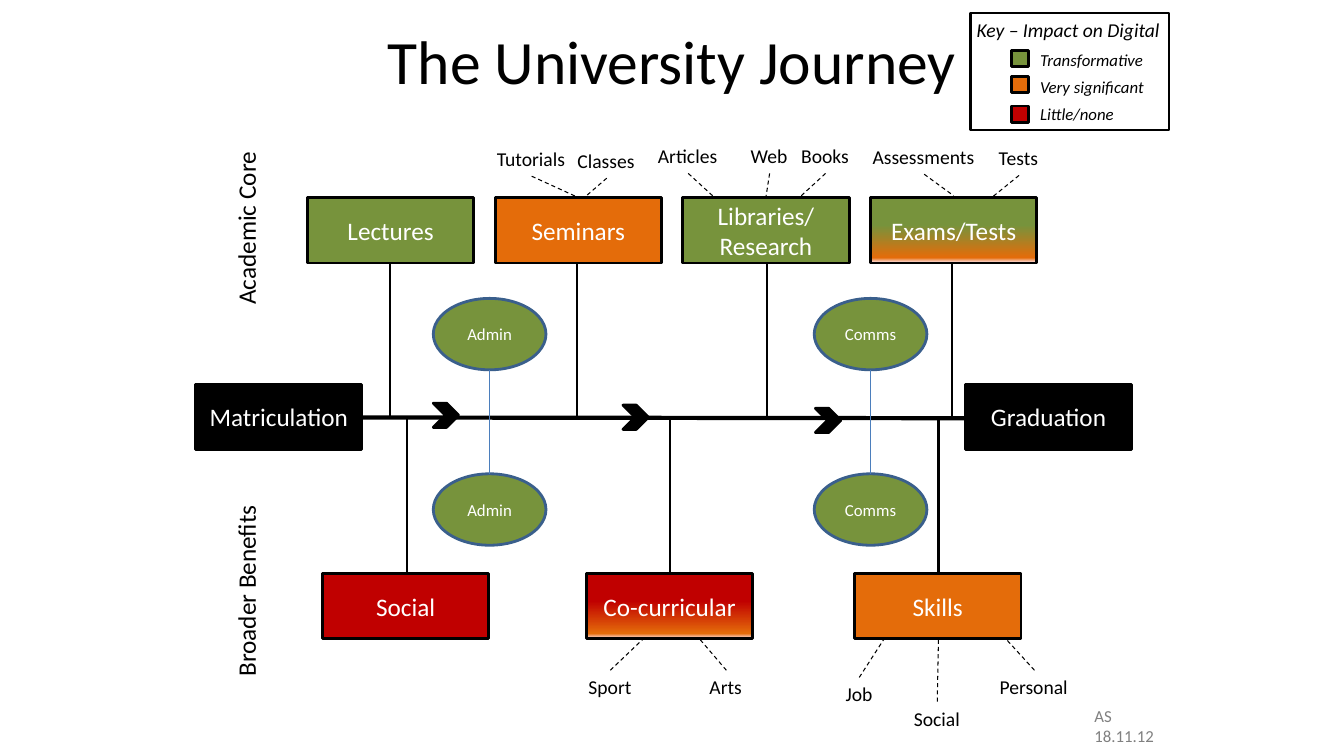
from copy import deepcopy
from typing import NamedTuple, Optional

from lxml.etree import SubElement
from pptx import Presentation
from pptx.dml.color import RGBColor
from pptx.enum.dml import MSO_LINE
from pptx.enum.shapes import MSO_CONNECTOR, MSO_SHAPE
from pptx.enum.text import MSO_ANCHOR, MSO_AUTO_SIZE, PP_ALIGN
from pptx.oxml.ns import qn
from pptx.shapes.autoshape import Shape
from pptx.util import Cm, Pt

BLACK = RGBColor(0x00, 0x00, 0x00)
WHITE = RGBColor(0xFF, 0xFF, 0xFF)
GREY = RGBColor(0x80, 0x80, 0x80)
GREEN = RGBColor(0x77, 0x93, 0x3C)
ORANGE = RGBColor(0xE4, 0x6C, 0x0A)
RED = RGBColor(0xC0, 0x00, 0x00)
PALE = RGBColor(0xFF, 0xEB, 0xFA)
OVAL_LINE = RGBColor(0x3A, 0x5F, 0x8C)
LINK_BLUE = RGBColor(0x4B, 0x7E, 0xBC)

BOX_W, BOX_H = 4.19, 1.65
OVAL_W, OVAL_H = 2.84, 1.8
LABEL_H = 0.86
CORE_Y, AXIS_Y, BENEFIT_Y = 4.98, 10.53, 14.45


class Stage(NamedTuple):
    text: str
    x: float
    y: float
    fill: RGBColor
    fade: Optional[RGBColor] = None


class Label(NamedTuple):
    """An activity name and the point on its stage that it is linked to."""
    text: str
    x: float
    y: float
    w: float
    to_x: float
    to_y: float


class Note(NamedTuple):
    text: str
    x: float
    y: float
    w: float
    h: float
    size: int
    color: RGBColor = BLACK
    italic: bool = False
    rotation: int = 0
    gap: float = 0


CORE = [
    Stage(text, 7.75 + 4.73 * i, CORE_Y, fill, fade)
    for i, (text, fill, fade) in enumerate([
        ("Lectures", GREEN, None),
        ("Seminars", ORANGE, None),
        ("Libraries/\nResearch", GREEN, None),
        ("Exams/Tests", GREEN, ORANGE),
    ])
]
BENEFITS = [
    Stage("Social", 8.13, BENEFIT_Y, RED),
    Stage("Co-curricular", 14.78, BENEFIT_Y, RED, ORANGE),
    Stage("Skills", 21.54, BENEFIT_Y, ORANGE),
]
ENDS = [
    Stage("Matriculation", 4.93, 9.68, BLACK),
    Stage("Graduation", 24.33, 9.68, BLACK),
]
CORE_STEMS = [9.83, 14.53, 19.33, 24.0]
BENEFIT_STEMS = [10.26, 16.89, 23.65]
SERVICES = [("Admin", 10.92), ("Comms", 20.52)]
CHEVRONS = [(10.92, 10.16), (15.7, 10.21), (20.55, 10.29)]
LABELS = [
    Label("Tutorials", 12.27, 3.58, 2.26, 14.58, 4.98),
    Label("Classes", 14.3, 3.63, 1.98, 14.78, 4.93),
    Label("Articles", 16.33, 3.51, 2.03, 18.01, 4.98),
    Label("Web", 18.67, 3.51, 1.45, 19.3, 4.98),
    Label("Books", 19.94, 3.51, 1.73, 20.14, 4.98),
    Label("Assessments", 21.74, 3.53, 3.1, 24.03, 4.93),
    Label("Tests", 24.92, 3.56, 1.52, 24.99, 4.98),
    Label("Sport", 14.58, 16.89, 1.6, 16.21, 16.1),
    Label("Arts", 17.63, 16.89, 1.35, 17.63, 16.1),
    Label("Job", 21.06, 17.07, 1.19, 22.28, 16.1),
    Label("Social", 22.78, 17.68, 1.68, 23.65, 16.1),
    Label("Personal", 24.94, 16.89, 2.26, 25.35, 16.1),
]
NOTES = [
    Note("Broader Benefits", 3.76, 14.35, 4.88, 1.02, 18, rotation=270),
    Note("Academic Core", 3.99, 5.21, 4.42, 1.02, 18, rotation=270),
    Note("AS\n18.11.12", 27.33, 17.65, 2.03, 1.27, 12, GREY),
    Note("Key – Impact on Digital", 24.36, 0.33, 5.16, 0.86, 14, italic=True),
    Note("Transformative\nVery significant\nLittle/none",
         25.96, 1.14, 3.15, 2.13, 12, italic=True, gap=4.9),
]
SWATCHES = [(1.27, GREEN), (1.93, ORANGE), (2.67, RED)]

prs = Presentation()
prs.slide_width, prs.slide_height = Cm(33.87), Cm(19.05)
shapes = prs.slides.add_slide(prs.slide_layouts[6]).shapes


def write(s: Shape, text: str, size: float, color: RGBColor,
          align: PP_ALIGN = PP_ALIGN.CENTER, italic: bool = False, gap: float = 0) -> None:
    tf = s.text_frame
    tf.text = text
    for i, p in enumerate(tf.paragraphs):
        p.alignment = align
        p.space_before = Pt(gap if i else 0)
        p.font.name, p.font.size = "Calibri", Pt(size)
        p.font.color.rgb = color
        p.font.italic = italic


def add_preset(kind: MSO_SHAPE, x: float, y: float, w: float, h: float,
               fill: Optional[RGBColor], line: RGBColor = BLACK) -> Shape:
    s = shapes.add_shape(kind, Cm(x), Cm(y), Cm(w), Cm(h))
    s.shadow.inherit = False
    if fill is None:
        s.fill.background()
    else:
        s.fill.solid()
        s.fill.fore_color.rgb = fill
    s.line.color.rgb, s.line.width = line, Pt(2)
    return s


def fade_down(s: Shape, top: RGBColor, bottom: RGBColor) -> None:
    """Blend top into bottom, ending in a thin pale edge."""
    s.fill.gradient()
    s.fill.gradient_angle = 270
    stop_list = s.element.spPr.find(qn("a:gradFill")).find(qn("a:gsLst"))
    stop_list.append(deepcopy(stop_list[-1]))
    stops = [(0.42, top), (0.92, bottom), (1.0, PALE)]
    for stop, (position, color) in zip(s.fill.gradient_stops, stops):
        stop.position = position
        stop.color.rgb = color


def add_stage(stage: Stage) -> None:
    s = add_preset(MSO_SHAPE.RECTANGLE, stage.x, stage.y, BOX_W, BOX_H, stage.fill)
    if stage.fade is not None:
        fade_down(s, stage.fill, stage.fade)
    write(s, stage.text, 18, WHITE)


def add_line(x1: float, y1: float, x2: float, y2: float, width: float,
             color: RGBColor = BLACK, dashed: bool = False) -> None:
    c = shapes.add_connector(MSO_CONNECTOR.STRAIGHT, Cm(x1), Cm(y1), Cm(x2), Cm(y2))
    c.line.color.rgb, c.line.width = color, Pt(width)
    if dashed:
        c.line.dash_style = MSO_LINE.DASH
    SubElement(c.element.spPr, qn("a:effectLst"))


def add_note(note: Note) -> None:
    s = shapes.add_textbox(Cm(note.x), Cm(note.y), Cm(note.w), Cm(note.h))
    s.rotation = note.rotation
    s.text_frame.word_wrap = False
    s.text_frame.auto_size = MSO_AUTO_SIZE.SHAPE_TO_FIT_TEXT
    write(s, note.text, note.size, note.color, PP_ALIGN.LEFT, note.italic, note.gap)


def add_label(label: Label) -> None:
    add_note(Note(label.text, label.x, label.y, label.w, LABEL_H, 14))
    start_y = label.y + LABEL_H if label.y < label.to_y else label.y
    add_line(label.x + label.w / 2, start_y, label.to_x, label.to_y, 0.75, dashed=True)


title = shapes.add_textbox(Cm(5.51), Cm(-0.08), Cm(22.86), Cm(3.18))
title.text_frame.word_wrap = True
title.text_frame.vertical_anchor = MSO_ANCHOR.MIDDLE
write(title, "The University Journey", 44, BLACK)

for stage in CORE + BENEFITS + ENDS:
    add_stage(stage)
add_line(9.12, 10.52, 24.64, 10.54, 3)
for name, x in SERVICES:
    for y, edge in ((7.52, 7.52 + OVAL_H), (11.94, 11.94)):
        oval = add_preset(MSO_SHAPE.OVAL, x, y, OVAL_W, OVAL_H, GREEN, OVAL_LINE)
        write(oval, name, 12, WHITE)
        add_line(x + OVAL_W / 2, edge, x + OVAL_W / 2, AXIS_Y, 0.75, LINK_BLUE)
for x in CORE_STEMS:
    add_line(x, CORE_Y + BOX_H, x, AXIS_Y, 1.5)
for x in BENEFIT_STEMS:
    add_line(x, AXIS_Y, x, BENEFIT_Y, 1.5)
for label in LABELS:
    add_label(label)
for x, y in CHEVRONS:
    add_preset(MSO_SHAPE.CHEVRON, x, y, 0.64, 0.61, BLACK)
for note in NOTES:
    add_note(note)
for y, color in SWATCHES:
    add_preset(MSO_SHAPE.RECTANGLE, 25.5, y, 0.43, 0.41, color)
add_preset(MSO_SHAPE.RECTANGLE, 24.46, 0.33, 5.0, 2.95, None)

prs.save("out.pptx")
